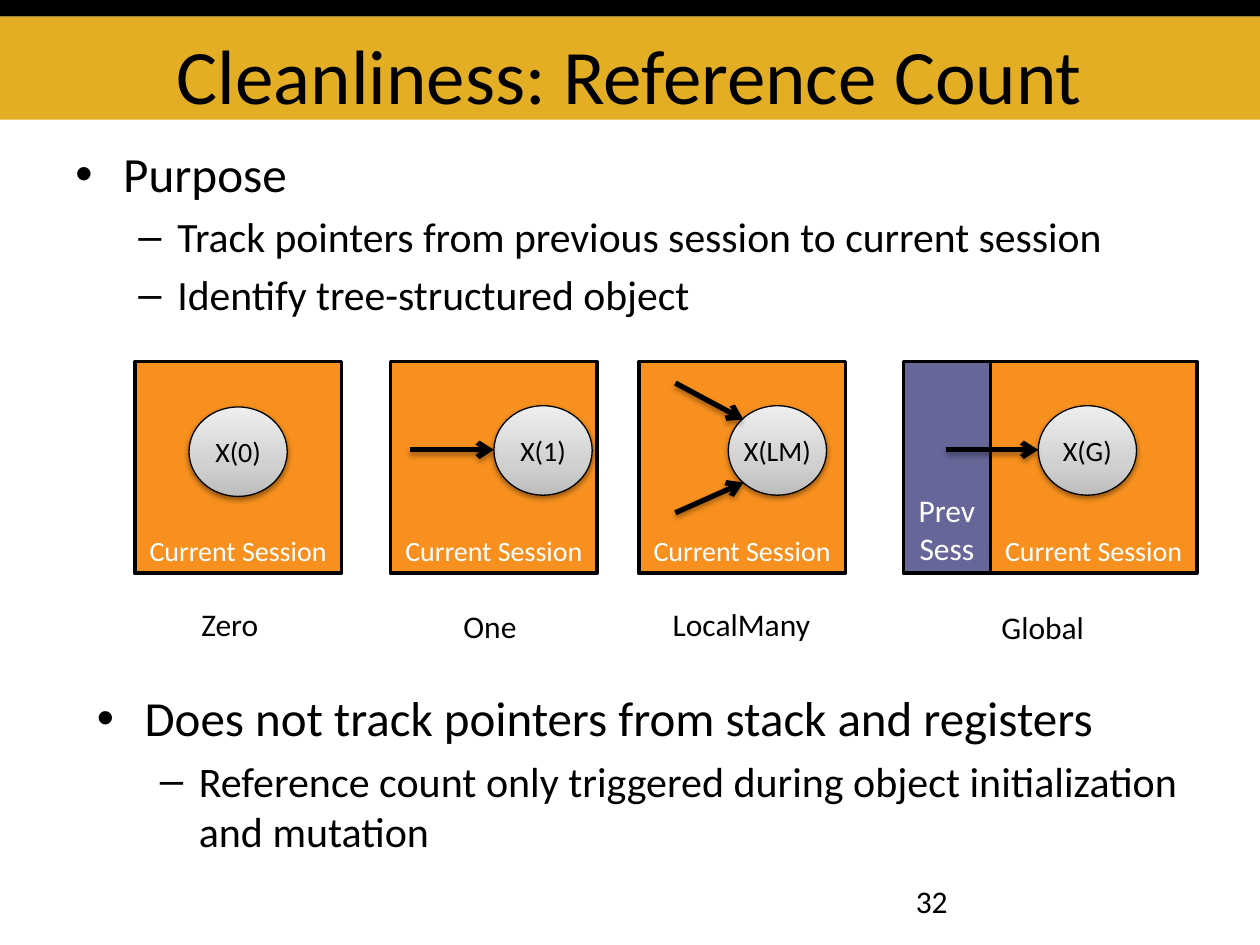
"""Builds the slide on reference counts as a measure of cleanliness."""
from dataclasses import dataclass

from pptx import Presentation
from pptx import util as u
from pptx.dml.color import RGBColor
from pptx.enum import shapes, text
from pptx.oxml import parse_xml
from pptx.oxml.ns import nsdecls

COLORS = {
    "black": "000000", "white": "FFFFFF", "gold": "E3AE24",
    "current": "F7901E", "previous": "666699",
}
NODE_STOPS = ((0, "BDBDBD"), (35, "D1D1D1"), (100, "EEEEEE"))
FONT = "Calibri"
SESSION_TOP, SESSION_WIDTH, SESSION_HEIGHT = 2.87, 1.64, 1.68
NODE_WIDTH, NODE_HEIGHT = 0.78, 0.71


@dataclass
class Box:
    left: float
    top: float
    width: float
    height: float

    def lengths(self) -> tuple:
        return tuple(map(u.Inches, (self.left, self.top, self.width, self.height)))


@dataclass
class Case:
    left: float
    node: str
    node_left: float
    node_top: float
    caption: str
    caption_box: Box


@dataclass
class Arrow:
    start: tuple[float, float]
    end: tuple[float, float]


@dataclass
class Bullet:
    wording: str
    level: int
    size: float


CASES = [
    Case(1.07, "X(0)", 1.5, 3.23, "Zero", Box(1.5, 4.75, 0.67, 0.4)),
    Case(3.1, "X(1)", 3.92, 3.22, "One", Box(3.58, 4.77, 0.63, 0.4)),
    Case(5.07, "X(LM)", 5.78, 3.22, "LocalMany", Box(5.24, 4.75, 1.31, 0.4)),
    Case(7.86, "X(G)", 8.24, 3.22, "Global", Box(7.85, 4.78, 0.86, 0.4)),
]
LOCAL_ARROWS = [
    Arrow((3.25, 3.57), (3.92, 3.57)),
    Arrow((5.36, 3.04), (5.9, 3.33)),
    Arrow((5.36, 4.07), (5.9, 3.83)),
]
GLOBAL_ARROW = Arrow((7.51, 3.57), (8.24, 3.57))
PURPOSE = [
    Bullet("Purpose", 0, 28.1),
    Bullet("Track pointers from previous session to current session", 1, 23.8),
    Bullet("Identify tree-structured object", 1, 23.8),
]
LIMITS = [
    Bullet("Does not track pointers from stack and registers", 0, 28),
    Bullet("Reference count only triggered during object initialization and mutation", 1, 24),
]
BULLET_STYLES = [("•", 0.38, -0.38), ("–", 0.81, -0.31)]


def rgb(name: str) -> RGBColor:
    """Return the named colour."""
    return RGBColor.from_string(COLORS[name])


def format_runs(paragraph, size: float, color: str) -> None:
    """Give every run of a paragraph its font."""
    for run in paragraph.runs:
        run.font.name = FONT
        run.font.size = u.Pt(size)
        run.font.color.rgb = rgb(color)


def add_shadow(properties, opacity: int, distance: float) -> None:
    """Add a soft downward shadow to shape properties."""
    properties.append(parse_xml(
        f'<a:effectLst {nsdecls("a")}><a:outerShdw blurRad="{u.Pt(3.1)}" '
        f'dist="{u.Pt(distance)}" dir="5400000" rotWithShape="0">'
        f'<a:srgbClr val="{COLORS["black"]}"><a:alpha val="{opacity * 1000}"/>'
        '</a:srgbClr></a:outerShdw></a:effectLst>'))


def add_text(slide, box: Box, wording: str, size: float, wrap: bool = True):
    """Add a text box with one black line of text."""
    label = slide.shapes.add_textbox(*box.lengths())
    frame = label.text_frame
    frame.text = wording
    frame.word_wrap = wrap
    format_runs(frame.paragraphs[0], size, "black")
    return frame


def add_band(slide, box: Box, color: str):
    """Add a plain rectangle without outline."""
    band = slide.shapes.add_shape(shapes.MSO_SHAPE.RECTANGLE, *box.lengths())
    band.shadow.inherit = False
    band.fill.solid()
    band.fill.fore_color.rgb = rgb(color)
    band.line.fill.background()
    return band


def add_session(slide, left: float, width: float, color: str, wording: str, size: float) -> None:
    """Add an outlined session block labelled at its bottom."""
    session = add_band(slide, Box(left, SESSION_TOP, width, SESSION_HEIGHT), color)
    session.line.color.rgb = rgb("black")
    session.line.width = u.Pt(2)
    frame = session.text_frame
    frame.text = wording
    frame.word_wrap = True
    frame.vertical_anchor = text.MSO_ANCHOR.BOTTOM
    for paragraph in frame.paragraphs:
        paragraph.alignment = text.PP_ALIGN.CENTER
        format_runs(paragraph, size, "white")


def add_node(slide, case: Case) -> None:
    """Add the shaded object circle of a case."""
    box = Box(case.node_left, case.node_top, NODE_WIDTH, NODE_HEIGHT)
    node = slide.shapes.add_shape(shapes.MSO_SHAPE.OVAL, *box.lengths())
    node.line.color.rgb = rgb("black")
    node.line.width = u.Pt(0.75)
    stops = "".join(f'<a:gs pos="{position * 1000}"><a:srgbClr val="{color}"/></a:gs>'
                    for position, color in NODE_STOPS)
    properties = node._element.spPr
    properties.prstGeom.addnext(parse_xml(
        f'<a:gradFill {nsdecls("a")} rotWithShape="1"><a:gsLst>{stops}</a:gsLst>'
        '<a:lin ang="16200000" scaled="0"/></a:gradFill>'))
    add_shadow(properties, 38, 1.6)
    frame = node.text_frame
    frame.margin_left = frame.margin_right = frame.margin_top = frame.margin_bottom = 0
    frame.vertical_anchor = text.MSO_ANCHOR.MIDDLE
    frame.text = case.node
    frame.paragraphs[0].alignment = text.PP_ALIGN.CENTER
    format_runs(frame.paragraphs[0], 16, "black")


def add_arrow(slide, arrow: Arrow) -> None:
    """Add a thick pointer arrow."""
    pointer = slide.shapes.add_connector(
        shapes.MSO_CONNECTOR.STRAIGHT, *map(u.Inches, arrow.start + arrow.end))
    pointer.line.color.rgb = rgb("black")
    pointer.line.width = u.Pt(3)
    pointer.line._get_or_add_ln().append(
        parse_xml(f'<a:tailEnd {nsdecls("a")} type="arrow"/>'))
    add_shadow(pointer._element.spPr, 35, 1.8)


def add_bullets(slide, box: Box, bullets: list[Bullet]) -> None:
    """Add a two-level bulleted list."""
    frame = slide.shapes.add_textbox(*box.lengths()).text_frame
    frame.word_wrap = True
    for index, bullet in enumerate(bullets):
        paragraph = frame.add_paragraph() if index else frame.paragraphs[0]
        mark, margin, indent = BULLET_STYLES[bullet.level]
        paragraph.text = bullet.wording
        paragraph.level = bullet.level
        if index:
            paragraph.space_before = u.Pt(round(bullet.size * 0.2, 1))
        properties = paragraph._p.get_or_add_pPr()
        properties.set("marL", str(u.Inches(margin)))
        properties.set("indent", str(u.Inches(indent)))
        properties.append(parse_xml(f'<a:buFont {nsdecls("a")} typeface="Arial"/>'))
        properties.append(parse_xml(f'<a:buChar {nsdecls("a")} char="{mark}"/>'))
        format_runs(paragraph, bullet.size, "black")


def main() -> None:
    """Build and save the slide."""
    deck = Presentation()
    deck.slide_width, deck.slide_height = u.Inches(10), u.Inches(7.5)
    slide = deck.slides.add_slide(deck.slide_layouts[6])
    add_band(slide, Box(0, 0.13, 10, 0.82), "gold")
    add_band(slide, Box(0, 0, 10, 0.13), "black")
    title = add_text(slide, Box(0.5, 0.13, 9, 0.82), "Cleanliness: Reference Count", 44)
    title.vertical_anchor = text.MSO_ANCHOR.BOTTOM
    title.margin_bottom = 0
    title.paragraphs[0].alignment = text.PP_ALIGN.CENTER
    add_text(slide, Box(7.17, 6.95, 2.33, 0.4), "32", 18)
    for case in CASES:
        add_session(slide, case.left, SESSION_WIDTH, "current", "Current Session", 16)
        add_node(slide, case)
        add_text(slide, case.caption_box, case.caption, 18, wrap=False)
    for arrow in LOCAL_ARROWS:
        add_arrow(slide, arrow)
    add_session(slide, 7.17, 0.69, "previous", "Prev\vSess", 18)
    add_arrow(slide, GLOBAL_ARROW)
    add_bullets(slide, Box(0.5, 1.09, 9, 1.65), PURPOSE)
    add_bullets(slide, Box(0.67, 5.41, 9, 1.35), LIMITS)
    deck.save("out.pptx")


if __name__ == "__main__":
    main()
